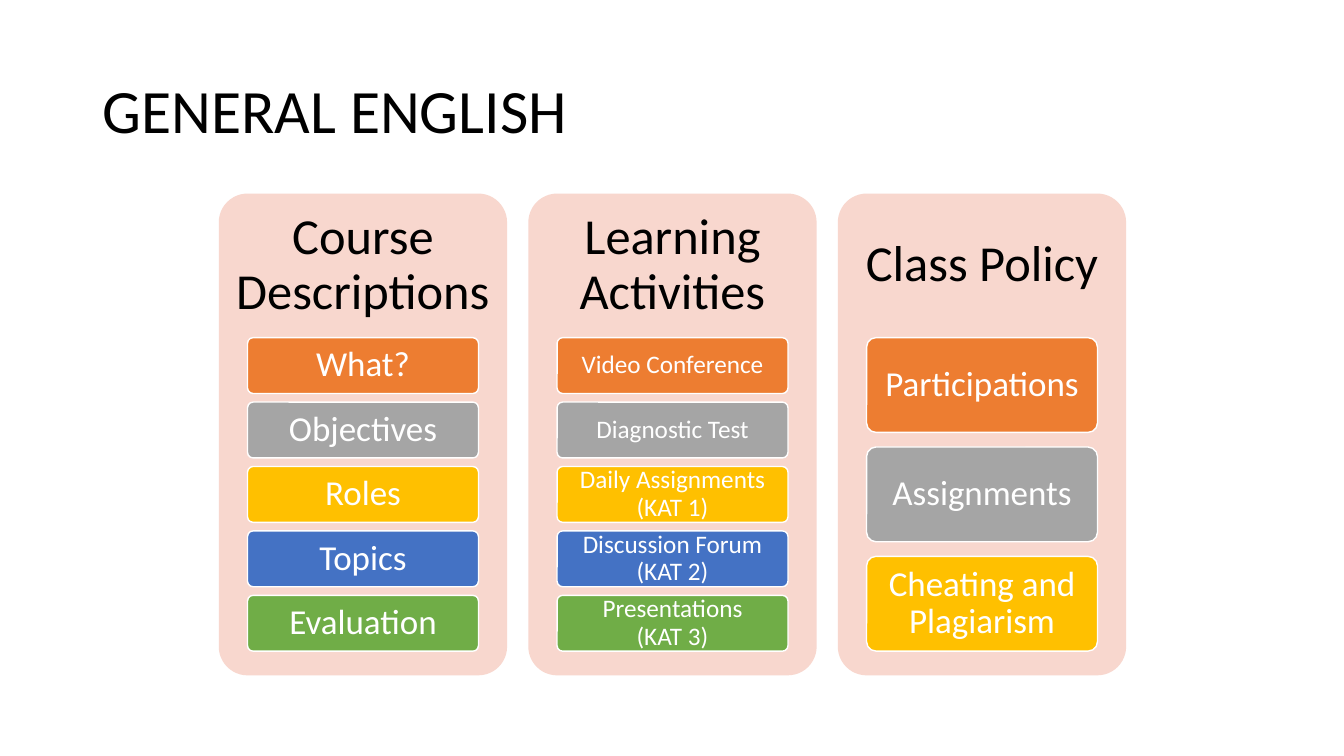
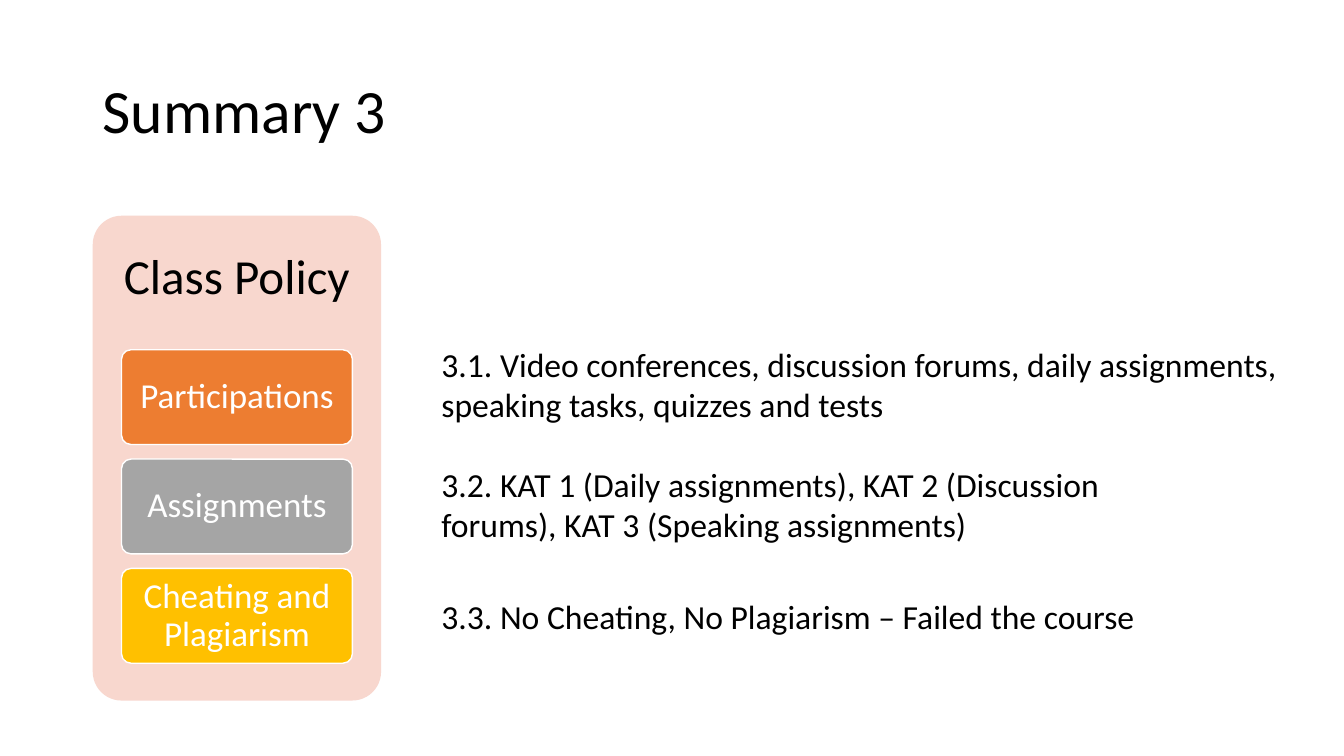
from dataclasses import dataclass

from pptx import Presentation
from pptx.dml.color import RGBColor
from pptx.enum.shapes import MSO_SHAPE as Preset
from pptx.enum.text import MSO_ANCHOR as Anchor, PP_ALIGN as Align
from pptx.util import Inches, Pt


@dataclass(frozen=True)
class Theme:
    font: str = "Calibri"
    ink: str = "000000"
    paper: str = "FFFFFF"
    panel: str = "F8D7CE"
    tiles: tuple = ("ED7D31", "A5A5A5", "FFC000", "4472C4", "70AD47")
    title: int = 44
    heading: int = 36
    small_heading: int = 35
    label: int = 25
    small_label: int = 18
    body: int = 24


theme = Theme()
GRID = Inches(0.1)
CARD_WIDTH, CARD_PITCH = 28.6, 30.7
TILE_INDENT, TILE_WIDTH, STACK_HEIGHT = 2.85, 22.9, 31.1
GAP_SHARE = 2 / 13
TITLE_AREA = (9.2, 4, 115, 14.5)


def add_box(page, area, text, size, color=theme.ink, fill=None, outline=None,
            insets=(1, 0.5), anchor=Anchor.MIDDLE, align=Align.CENTER, spacing=0.9):
    place = [round(length * GRID) for length in area]
    if fill:
        box = page.shapes.add_shape(Preset.ROUNDED_RECTANGLE, *place)
        box.adjustments[0] = 0.1
        box.shadow.inherit = False
        box.fill.solid()
        box.fill.fore_color.rgb = RGBColor.from_string(fill)
        if outline:
            box.line.color.rgb = RGBColor.from_string(outline)
            box.line.width = Pt(1)
        else:
            box.line.fill.background()
    else:
        box = page.shapes.add_textbox(*place)
    side, edge = [round(inset * GRID) for inset in insets]
    frame_format = {"word_wrap": True, "vertical_anchor": anchor,
                    "margin_left": side, "margin_right": side,
                    "margin_top": edge, "margin_bottom": edge}
    for name, value in frame_format.items():
        setattr(box.text_frame, name, value)
    box.text_frame.text = text
    for para in box.text_frame.paragraphs:
        para.alignment, para.line_spacing = align, spacing
        for span in para.runs:
            span.font.name, span.font.size = theme.font, Pt(size)
            span.font.color.rgb = RGBColor.from_string(color)


def add_card(page, left, top, height, heading, heading_size, heading_height,
             stack_top, labels, label_size, insets):
    add_box(page, (left, top, CARD_WIDTH, height), "", heading_size, fill=theme.panel)
    add_box(page, (left, top, CARD_WIDTH, heading_height), heading, heading_size,
            insets=(1.5, 1.5))
    count = len(labels)
    tile_height = STACK_HEIGHT / (count + (count - 1) * GAP_SHARE)
    pitch = tile_height * (1 + GAP_SHARE)
    for row, (label, fill) in enumerate(zip(labels, theme.tiles)):
        area = (left + TILE_INDENT, stack_top + row * pitch, TILE_WIDTH, tile_height)
        add_box(page, area, label, label_size, theme.paper, fill, theme.paper, insets)


deck = Presentation()
deck.slide_width, deck.slide_height = Inches(13.33), Inches(7.5)
pages = []
for title in ("GENERAL ENGLISH", "Summary 3"):
    page = deck.slides.add_slide(deck.slide_layouts[6])
    add_box(page, TITLE_AREA, title, theme.title, align=Align.LEFT)
    pages.append(page)
overview, summary = pages

wide_insets, tight_insets = (0.7, 0.5), (0.5, 0.4)
policies = ("Participations", "Assignments", "Cheating and Plagiarism")
cards = (
    ("Course Descriptions", ("What?", "Objectives", "Roles", "Topics", "Evaluation"),
     theme.label, wide_insets),
    ("Learning Activities",
     ("Video Conference", "Diagnostic Test", "Daily Assignments (KAT 1)",
      "Discussion Forum\n(KAT 2)", "Presentations\n(KAT 3)"),
     theme.small_label, tight_insets),
    ("Class Policy", policies, theme.label, wide_insets),
)
for column, (heading, labels, label_size, insets) in enumerate(cards):
    add_card(overview, 21.7 + column * CARD_PITCH, 19.2, 47.8, heading, theme.heading,
             14.3, 33.5, labels, label_size, insets)

add_card(summary, 9.2, 21.4, 48.1, "Class Policy", theme.small_heading, 12.5, 34.7,
         policies, theme.label, wide_insets)
details = (
    (33.6, 85.5, 9.1, "3.1. Video conferences, discussion forums, daily assignments, "
                      "speaking tasks, quizzes and tests"),
    (45.5, 76.2, 9.1, "3.2. KAT 1 (Daily assignments), KAT 2 (Discussion forums), "
                      "KAT 3 (Speaking assignments)"),
    (58.6, 76.2, 5, "3.3. No Cheating, No Plagiarism – Failed the course"),
)
for top, width, height, text in details:
    add_box(summary, (42.8, top, width, height), text, theme.body,
            anchor=Anchor.TOP, align=Align.LEFT, spacing=1.0)

deck.save("out.pptx")
